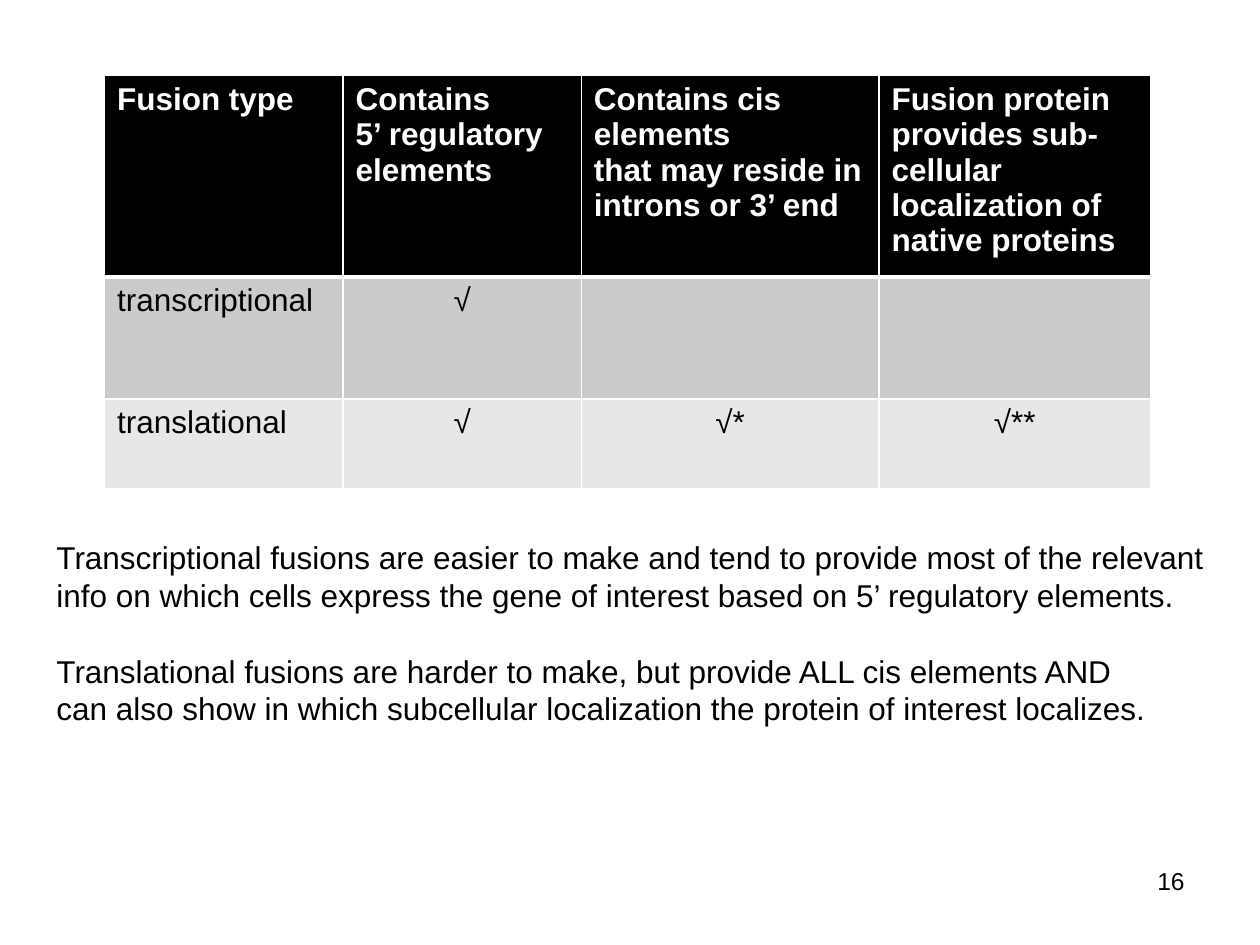
from lxml import etree
from pptx import Presentation, util as u
from pptx.dml.color import RGBColor
from pptx.enum import text
from pptx.oxml.ns import qn

WIDTH, HEIGHT = u.Inches(10), u.Inches(7.5)
BLACK, WHITE = "000000", "FFFFFF"
ROW_FILLS = [BLACK, "CBCBCB", "E7E7E7"]
COLUMN_WIDTHS = [1.89, 1.89, 2.36, 2.15]
ROW_HEIGHTS = [1.6, 0.97, 0.71]
FUSIONS = [
    ["Fusion type", "Contains\n5’ regulatory elements",
     "Contains cis elements\nthat may reside in introns or 3’ end",
     "Fusion protein provides sub-cellular localization of native proteins"],
    ["transcriptional", "√", "", ""],
    ["translational", "√", "√*", "√**"],
]
EXPLANATION = [
    "Transcriptional fusions are easier to make and tend to provide most of the relevant",
    "info on which cells express the gene of interest based on 5’ regulatory elements.",
    "Translational fusions are harder to make, but provide ALL cis elements AND",
    "can also show in which subcellular localization the protein of interest localizes.",
]


def colour(hex_code):
    """Return the colour for a hex string."""
    return RGBColor.from_string(hex_code)


def share(left, top, width, height):
    """Turn shares of the slide's size into a box."""
    return (round(left * WIDTH), round(top * HEIGHT),
            round(width * WIDTH), round(height * HEIGHT))


def write(frame, words, size=18, ink=BLACK, bold=False, align=text.PP_ALIGN.LEFT):
    """Put words into a text frame and format every paragraph."""
    frame.text = words
    for paragraph in frame.paragraphs:
        paragraph.alignment = align
        paragraph.font.size = u.Pt(size)
        for run in paragraph.runs:
            run.font.name, run.font.size, run.font.bold = "Arial", u.Pt(size), bold
            run.font.color.rgb = colour(ink)


def border(cell, **widths):
    """Draw white cell borders with the given widths in points."""
    properties = cell._tc.get_or_add_tcPr()
    for side, points in widths.items():
        line = etree.SubElement(properties, qn(f"a:ln{side}"), w=str(u.Pt(points)))
        fill = etree.SubElement(line, qn("a:solidFill"))
        etree.SubElement(fill, qn("a:srgbClr"), val=WHITE)


def add_fusion_table(slide, box):
    """Place the comparison of fusion types."""
    table = slide.shapes.add_table(len(FUSIONS), len(COLUMN_WIDTHS), *box).table
    for column, width in zip(table.columns, COLUMN_WIDTHS):
        column.width = round(box[2] * width / sum(COLUMN_WIDTHS))
    for r, (row, height) in enumerate(zip(table.rows, ROW_HEIGHTS)):
        row.height = round(box[3] * height / sum(ROW_HEIGHTS))
        header = r == 0
        for c, cell in enumerate(row.cells):
            border(cell, L=1, R=1, T=3 if r == 1 else 1, B=3 if header else 1)
            cell.fill.solid()
            cell.fill.fore_color.rgb = colour(ROW_FILLS[r])
            centred = not header and c > 0
            write(cell.text_frame, FUSIONS[r][c], ink=WHITE if header else BLACK, bold=header,
                  align=text.PP_ALIGN.CENTER if centred else text.PP_ALIGN.LEFT)


def add_explanation(slide, box):
    """Place the two statements below the table."""
    frame = slide.shapes.add_textbox(*box).text_frame
    frame.word_wrap = False
    frame.auto_size = text.MSO_AUTO_SIZE.SHAPE_TO_FIT_TEXT
    write(frame, "\n".join(EXPLANATION))
    frame.paragraphs[2].space_before = u.Pt(21.6)


def add_page_number(slide, box):
    """Place the page number at the lower right."""
    frame = slide.shapes.add_textbox(*box).text_frame
    frame.word_wrap = True
    write(frame, "16", size=14, align=text.PP_ALIGN.RIGHT)


def main():
    """Build and save the slide."""
    deck = Presentation()
    deck.slide_width, deck.slide_height = WIDTH, HEIGHT
    slide = deck.slides.add_slide(deck.slide_layouts[6])
    add_fusion_table(slide, share(0.083, 0.08, 0.83, 0.437))
    add_explanation(slide, share(0.035, 0.563, 0.946, 0.216))
    add_page_number(slide, share(0.717, 0.91, 0.233, 0.07))
    deck.save("out.pptx")


if __name__ == "__main__":
    main()
